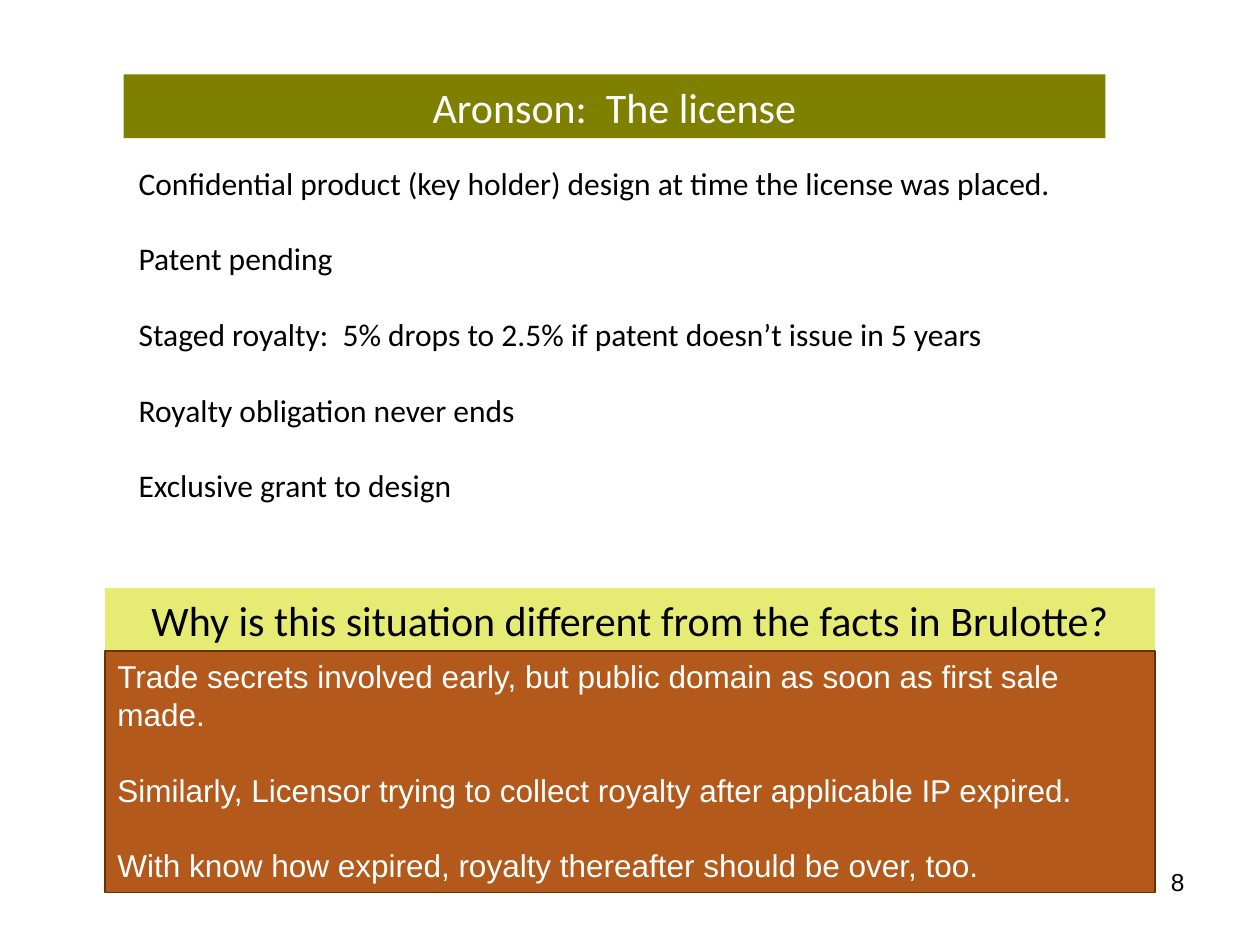
from pptx import Presentation
from pptx.dml.color import RGBColor
from pptx.enum.shapes import MSO_SHAPE
from pptx.enum.text import MSO_ANCHOR, MSO_AUTO_SIZE, PP_ALIGN
from pptx.oxml.ns import qn
from pptx.util import Pt

RECT = MSO_SHAPE.RECTANGLE
TOP, MIDDLE = MSO_ANCHOR.TOP, MSO_ANCHOR.MIDDLE
LEFT, CENTER, RIGHT = PP_ALIGN.LEFT, PP_ALIGN.CENTER, PP_ALIGN.RIGHT
NO_FIT = MSO_AUTO_SIZE.NONE

OLIVE, YELLOW, RUST, BROWN = "808000", "E6EB74", "B3591B", "663300"
BLACK, WHITE = "000000", "FFFFFF"
LINE_PITCH = 21.6


def rgb(hex_color):
    return RGBColor.from_string(hex_color)


def write(shape, *lines, font="Calibri", size=18, color=BLACK, align=LEFT,
          anchor=TOP, pitch=None, gap=0):
    """Fill a shape with one paragraph per line, without bullets."""
    frame = shape.text_frame
    frame.word_wrap = True
    frame.auto_size = NO_FIT
    frame.vertical_anchor = anchor
    frame.margin_left = frame.margin_right = Pt(7.2)
    frame.margin_top = frame.margin_bottom = Pt(3.6)
    for index, line in enumerate(lines):
        paragraph = frame.paragraphs[0] if index == 0 else frame.add_paragraph()
        paragraph.alignment = align
        paragraph.line_spacing = Pt(pitch) if pitch else 1.0
        paragraph.space_before = Pt(gap if index else 0)
        paragraph.space_after = Pt(0)
        run = paragraph.add_run()
        run.text = line
        run.font.name, run.font.size = font, Pt(size)
        run.font.color.rgb = rgb(color)
        properties = paragraph._p.get_or_add_pPr()
        properties.set("marL", "0")
        properties.set("indent", "0")
        properties.append(properties.makeelement(qn("a:buNone"), {}))


class SlideBuilder:
    """Holds the current slide and the style shared by its parts."""

    def __init__(self, slide):
        self.slide = slide
        self.list_style = {"pitch": LINE_PITCH, "gap": LINE_PITCH}
        self.banner_style = {"size": 24, "align": CENTER, "anchor": MIDDLE}

    def place(self, shape, box):
        shape.left, shape.top, shape.width, shape.height = map(Pt, box)
        return shape

    def title(self, text, box, fill):
        heading = self.place(self.slide.shapes.title, box)
        heading.fill.solid()
        heading.fill.fore_color.rgb = rgb(fill)
        write(heading, text, color=WHITE, **self.banner_style)

    def body(self, lines, box):
        terms = self.place(self.slide.placeholders[1], box)
        write(terms, *lines, **self.list_style)

    def panel(self, box, fill, line=None):
        panel = self.slide.shapes.add_shape(RECT, *map(Pt, box))
        panel.shadow.inherit = False
        panel.fill.solid()
        panel.fill.fore_color.rgb = rgb(fill)
        if line:
            panel.line.color.rgb = rgb(line)
            panel.line.width = Pt(0.75)
        else:
            panel.line.fill.background()
        return panel

    def banner(self, text, box, fill):
        write(self.panel(box, fill), text, **self.banner_style)

    def answer(self, lines, box, fill, line):
        write(self.panel(box, fill, line), *lines, font="Arial", color=WHITE,
              **self.list_style)

    def page_number(self, number, box):
        label = self.slide.shapes.add_textbox(*map(Pt, box))
        write(label, number, font="Arial", size=14, align=RIGHT)


def main():
    deck = Presentation()
    deck.slide_width, deck.slide_height = Pt(720), Pt(540)
    page = SlideBuilder(deck.slides.add_slide(deck.slide_layouts[1]))

    # License terms
    page.title("Aronson:  The license", (70.6, 42.5, 561, 36.4), OLIVE)
    page.body([
        "Confidential product (key holder) design at time the license was placed.",
        "Patent pending",
        "Staged royalty:  5% drops to 2.5% if patent doesn’t issue in 5 years",
        "Royalty obligation never ends",
        "Exclusive grant to design",
    ], (72, 90, 561, 247))

    # Question and its answer
    page.banner("Why is this situation different from the facts in Brulotte?",
                (60, 336, 600, 36.4), YELLOW)
    page.answer([
        "Trade secrets involved early, but public domain as soon as first sale made.",
        "Similarly, Licensor trying to collect royalty after applicable IP expired.",
        "With know how expired, royalty thereafter should be over, too.",
    ], (60, 372, 600, 138), RUST, BROWN)

    # Footer
    page.page_number("8", (516, 492, 168, 37.5))

    deck.save("out.pptx")


if __name__ == "__main__":
    main()
